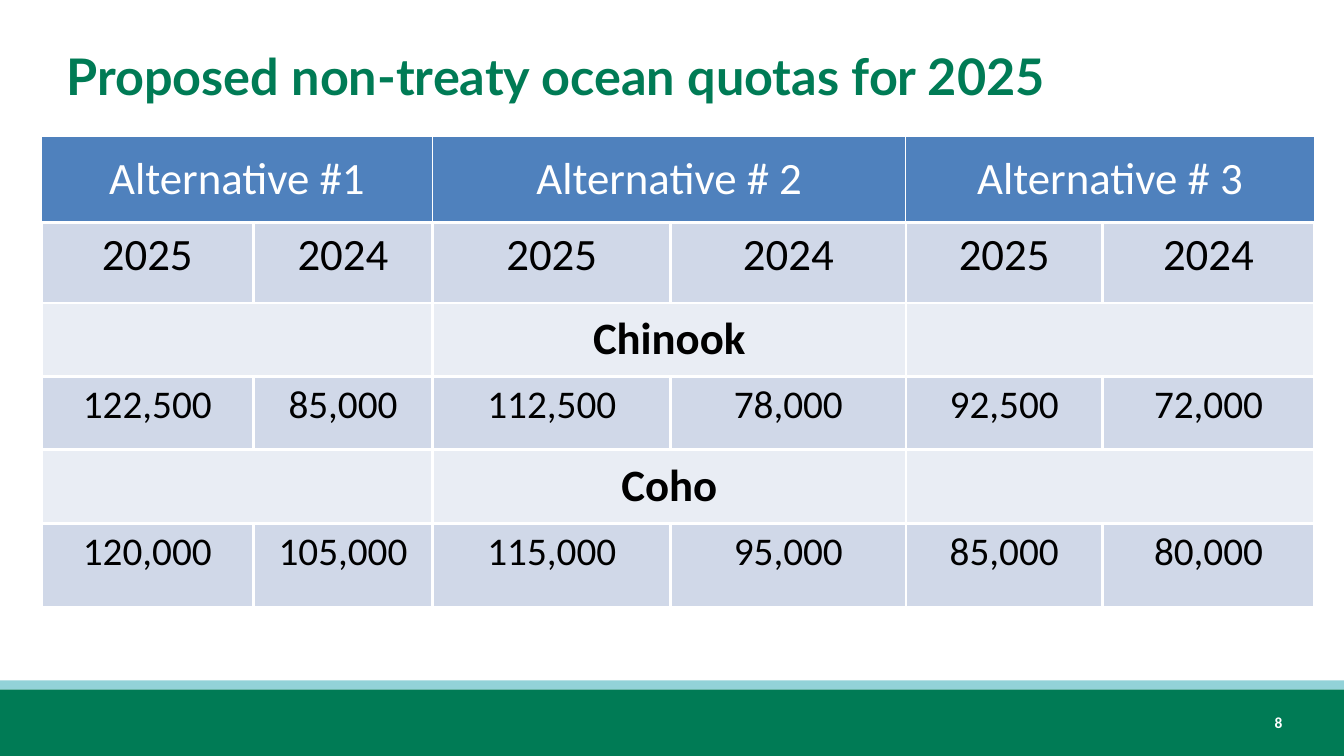
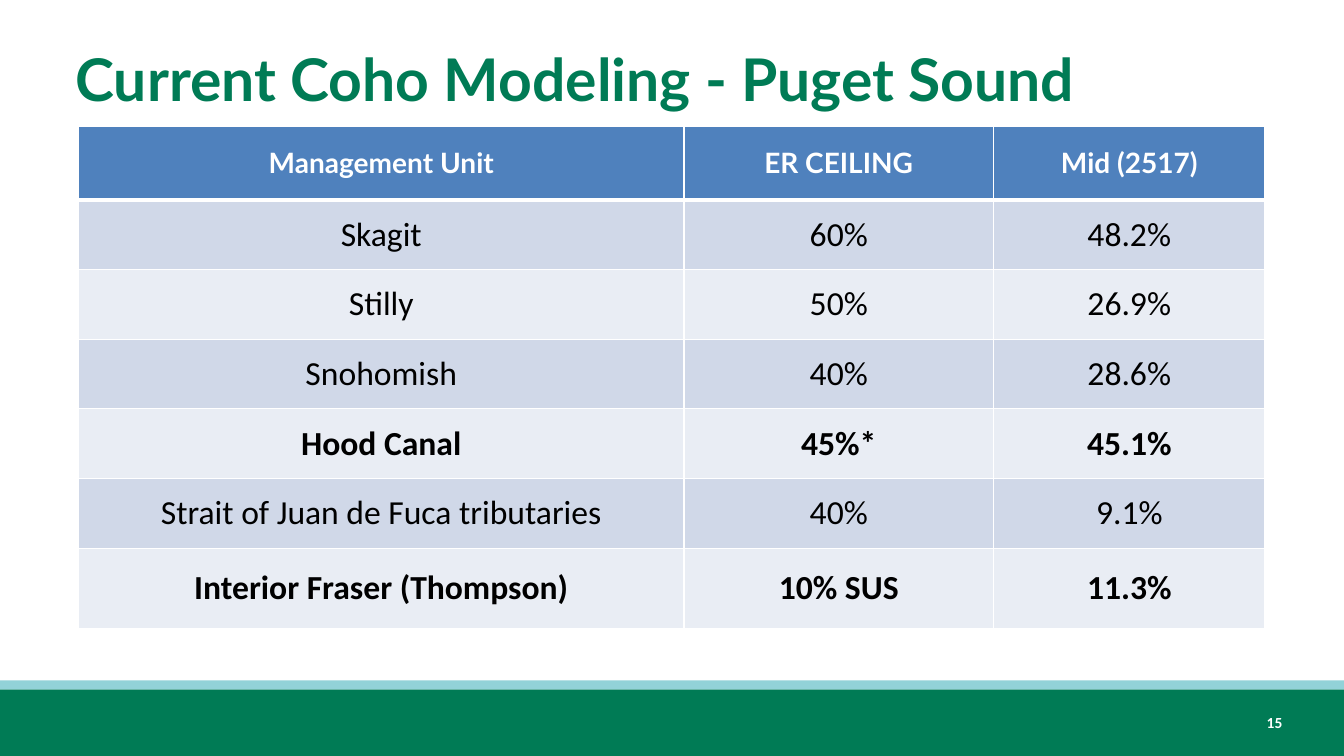
import collections
import pptx
import pptx.util
import pptx.dml.color
import pptx.enum.shapes
import pptx.enum.text
import pptx.oxml

Pt = pptx.util.Pt
RGB = pptx.dml.color.RGBColor
Align = pptx.enum.text.PP_ALIGN
Anchor = pptx.enum.text.MSO_ANCHOR

GREEN = RGB(0x00, 0x7B, 0x55)
AQUA = RGB(0x92, 0xD2, 0xD8)
BLUE = RGB(0x4F, 0x81, 0xBD)
MIST = RGB(0xD0, 0xD8, 0xE8)
PALE = RGB(0xE9, 0xED, 0xF4)
WHITE = RGB(0xFF, 0xFF, 0xFF)
BLACK = RGB(0x00, 0x00, 0x00)

WIDE = pptx.util.Inches(13.33)
HIGH = pptx.util.Inches(7.5)
BODY = "Calibri"
HEAD = "Lato"

Look = collections.namedtuple("Look", "size bold font color anchor")
Row = collections.namedtuple("Row", "height look cells")
Rules = collections.namedtuple("Rules", "grid side head")

ALT = Look(32, False, BODY, WHITE, Anchor.MIDDLE)
YEAR = Look(32, False, BODY, BLACK, Anchor.TOP)
FISH = Look(32, True, BODY, BLACK, Anchor.MIDDLE)
QUOTA = Look(28, False, BODY, BLACK, Anchor.TOP)
LABEL = Look(20, True, HEAD, WHITE, Anchor.MIDDLE)
PLAIN = Look(24, False, BODY, BLACK, Anchor.MIDDLE)
STRONG = PLAIN._replace(bold=True)
PAGE = Look(11, True, BODY, WHITE, Anchor.TOP)

QUOTAS = [
    Row(0.86, ALT, ["Alternative #1", None, "Alternative # 2", None,
                    "Alternative # 3", None]),
    Row(0.8, YEAR, ["2025", "2024"] * 3),
    Row(0.73, FISH, ["", None, "Chinook", None, "", None]),
    Row(0.73, QUOTA, ["122,500", "85,000", "112,500", "78,000",
                      "92,500", "72,000"]),
    Row(0.73, FISH, ["", None, "Coho", None, "", None]),
    Row(0.84, QUOTA, ["120,000", "105,000", "115,000", "95,000",
                      "85,000", "80,000"]),
]

UNITS = [
    Row(0.73, LABEL, ["Management Unit", "ER CEILING", "Mid (2517)"]),
    Row(0.69, PLAIN, ["Skagit", "60%", "48.2%"]),
    Row(0.69, PLAIN, ["Stilly", "50%", "26.9%"]),
    Row(0.69, PLAIN, ["Snohomish", "40%", "28.6%"]),
    Row(0.69, STRONG, ["Hood Canal", "45%*", "45.1%"]),
    Row(0.69, PLAIN, ["Strait of Juan de Fuca tributaries", "40%", "9.1%"]),
    Row(0.8, STRONG, ["Interior Fraser (Thompson)", "10% SUS", "11.3%"]),
]


def place(left, top, width, height):
    return (int(WIDE * left / 100), int(HIGH * top / 100),
            int(WIDE * width / 100), int(HIGH * height / 100))


def style(frame, look, align):
    for para in frame.paragraphs:
        para.alignment = align
        for run in para.runs:
            run.font.size = Pt(look.size)
            run.font.bold = look.bold
            run.font.name = look.font
            run.font.color.rgb = look.color


def write(slide, area, text, look, align=Align.LEFT):
    frame = slide.shapes.add_textbox(*place(*area)).text_frame
    frame.word_wrap = True
    frame.vertical_anchor = look.anchor
    frame.text = text
    style(frame, look, align)


def band(slide, top, height, color):
    shape = slide.shapes.add_shape(
        pptx.enum.shapes.MSO_SHAPE.RECTANGLE, *place(0, top, 100, height))
    shape.shadow.inherit = False
    shape.fill.solid()
    shape.fill.fore_color.rgb = color
    shape.line.fill.background()


def page(deck, title, area, size, number):
    slide = deck.slides.add_slide(deck.slide_layouts[6])
    band(slide, 91.2, 8.8, GREEN)
    band(slide, 90, 1.2, AQUA)
    write(slide, (90.3, 93.73, 5.85, 3.87), number, PAGE, Align.RIGHT)
    write(slide, area, title, Look(size, True, HEAD, GREEN, Anchor.MIDDLE))
    return slide


def edge(cell, side, top, base):
    props = cell._tc.get_or_add_tcPr()
    widths = {"lnL": side, "lnR": side, "lnT": top, "lnB": base}
    for spot, (tag, width) in enumerate(widths.items()):
        line = pptx.oxml.parse_xml(
            f'<a:{tag} xmlns:a="http://schemas.openxmlformats.org/drawingml/2006/main"'
            f' w="{Pt(width)}"><a:solidFill><a:srgbClr val="{WHITE}"/>'
            f'</a:solidFill></a:{tag}>')
        props.insert(spot, line)


def paint(cell, text, look, fill, inset):
    cell.fill.solid()
    cell.fill.fore_color.rgb = fill
    cell.vertical_anchor = look.anchor
    if inset is not None:
        cell.margin_left = cell.margin_right = inset
        cell.margin_top = cell.margin_bottom = inset
    if text:
        cell.text_frame.text = text
        style(cell.text_frame, look, Align.CENTER)


def chart(slide, area, cols, rows, rules, inset=None):
    left, top, width, height = place(*area)
    table = slide.shapes.add_table(
        len(rows), len(cols), left, top, width, height).table
    for col, share in zip(table.columns, cols):
        col.width = int(width * share / sum(cols))
    total = sum(row.height for row in rows)
    for r, row in enumerate(rows):
        table.rows[r].height = int(height * row.height / total)
        fill = BLUE if r == 0 else MIST if r % 2 else PALE
        side = rules.side if r == 0 else rules.grid
        above = rules.head if r == 1 else rules.grid
        below = rules.head if r == 0 else rules.grid
        for c, text in enumerate(row.cells):
            cell = table.cell(r, c)
            paint(cell, text, row.look, fill, inset)
            edge(cell, side, above, below)
            if text is None:
                table.cell(r, c - 1).merge(cell)


def main():
    deck = pptx.Presentation()
    deck.slide_width = WIDE
    deck.slide_height = HIGH

    slide = page(deck, "Proposed non-treaty ocean quotas for 2025",
                 (4.2, 3.33, 94.65, 13.33), 36, "8")
    chart(slide, (3.08, 18, 94.73, 62.4),
          [2.1, 1.78, 2.36, 2.33, 1.95, 2.1], QUOTAS, Rules(2.25, 1, 2.25))

    slide = page(deck, "Current Coho Modeling - Puget Sound",
                 (4.88, 4, 90.15, 12.67), 42, "15")
    chart(slide, (5.85, 16.67, 88.27, 66.53),
          [6, 3.07, 2.69], UNITS, Rules(1, 1, 3), inset=0)

    deck.save("out.pptx")


if __name__ == "__main__":
    main()
